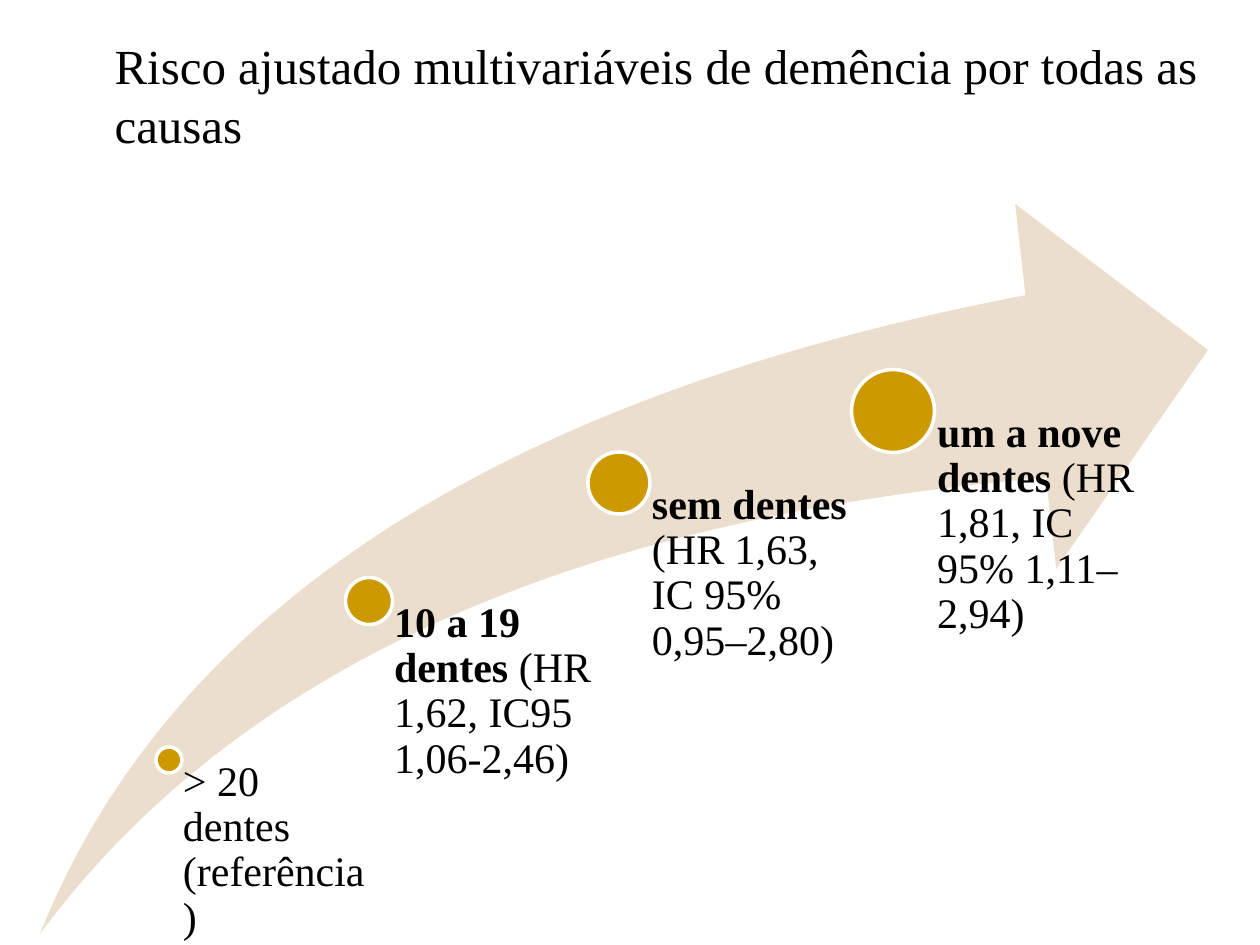
import pptx
import pptx.util
import pptx.dml.color
import pptx.enum.shapes
import pptx.enum.text

# Content: centre x, centre y, dot size, bold text, plain text, box width (px)
TITLE = "Risco ajustado multivariáveis de demência por todas as causas"
STEPS = [
    (169, 760, 26, "", "> 20 dentes (referência)", 199),
    (369, 601, 47, "10 a 19 dentes ", "(HR 1,62, IC95 1,06-2,46)", 246),
    (619, 483, 62, "sem dentes ", "(HR 1,63, IC 95% 0,95–2,80)", 246),
    (893, 411, 83, "um a nove dentes ", "(HR 1,81, IC 95% 1,11–2,94)", 246),
]
ARROW = (40, 204, 1168, 730)
BASE = ARROW[1] + ARROW[3]
COLORS = {"text": "000000", "arrow": "ECDECC", "dot": "CC9900", "ring": "FFFFFF"}
FONT = "Times New Roman"
SHAPE = pptx.enum.shapes.MSO_SHAPE
TEXT = pptx.enum.text


def px(num):
    return pptx.util.Emu(round(num * 914400 / 126))


def color(name):
    return pptx.dml.color.RGBColor.from_string(COLORS[name])


def style(para, size):
    para.alignment = TEXT.PP_ALIGN.LEFT
    para.font.name = FONT
    para.font.size = pptx.util.Pt(size)
    para.font.color.rgb = color("text")


def draw(slide, kind, box, fill):
    shape = slide.shapes.add_shape(kind, *map(px, box))
    shape.shadow.inherit = False
    shape.fill.solid()
    shape.fill.fore_color.rgb = color(fill)
    shape.line.fill.background()
    return shape


def add_dot(slide, x, y, size):
    box = (x - size / 2, y - size / 2, size, size)
    dot = draw(slide, SHAPE.OVAL, box, "dot")
    dot.line.color.rgb = color("ring")
    dot.line.width = pptx.util.Pt(2)


def add_label(slide, x, y, size, bold, plain, width):
    # Each label starts at its dot's centre and ends at the arrow's base
    box = slide.shapes.add_textbox(*map(px, (x, y, width, BASE - y)))
    frame = box.text_frame
    frame.word_wrap = True
    frame.margin_left = px(round(size * 0.53))
    frame.margin_top = frame.margin_right = frame.margin_bottom = 0
    para = frame.paragraphs[0]
    para.line_spacing = 0.9
    style(para, 24)
    if bold:
        run = para.add_run()
        run.text = bold
        run.font.bold = True
    para.add_run().text = plain


def main():
    deck = pptx.Presentation()
    deck.slide_width, deck.slide_height = px(1260), px(945)
    slide = deck.slides.add_slide(deck.slide_layouts[5])

    # Title
    title = slide.shapes.title
    title.left, title.top, title.width, title.height = map(px, (102, 32, 1140, 183))
    frame = title.text_frame
    frame.text = TITLE
    frame.word_wrap = True
    frame.auto_size = TEXT.MSO_AUTO_SIZE.NONE
    frame.vertical_anchor = TEXT.MSO_ANCHOR.BOTTOM
    frame.margin_bottom = px(62)
    style(frame.paragraphs[0], 28)

    # Rising arrow
    arrow = draw(slide, SHAPE.SWOOSH_ARROW, ARROW, "arrow")
    arrow.adjustments[0] = arrow.adjustments[1] = 0.25

    # Dots and labels
    for x, y, size, bold, plain, width in STEPS:
        add_dot(slide, x, y, size)
        add_label(slide, x, y, size, bold, plain, width)

    deck.save("out.pptx")


if __name__ == "__main__":
    main()
